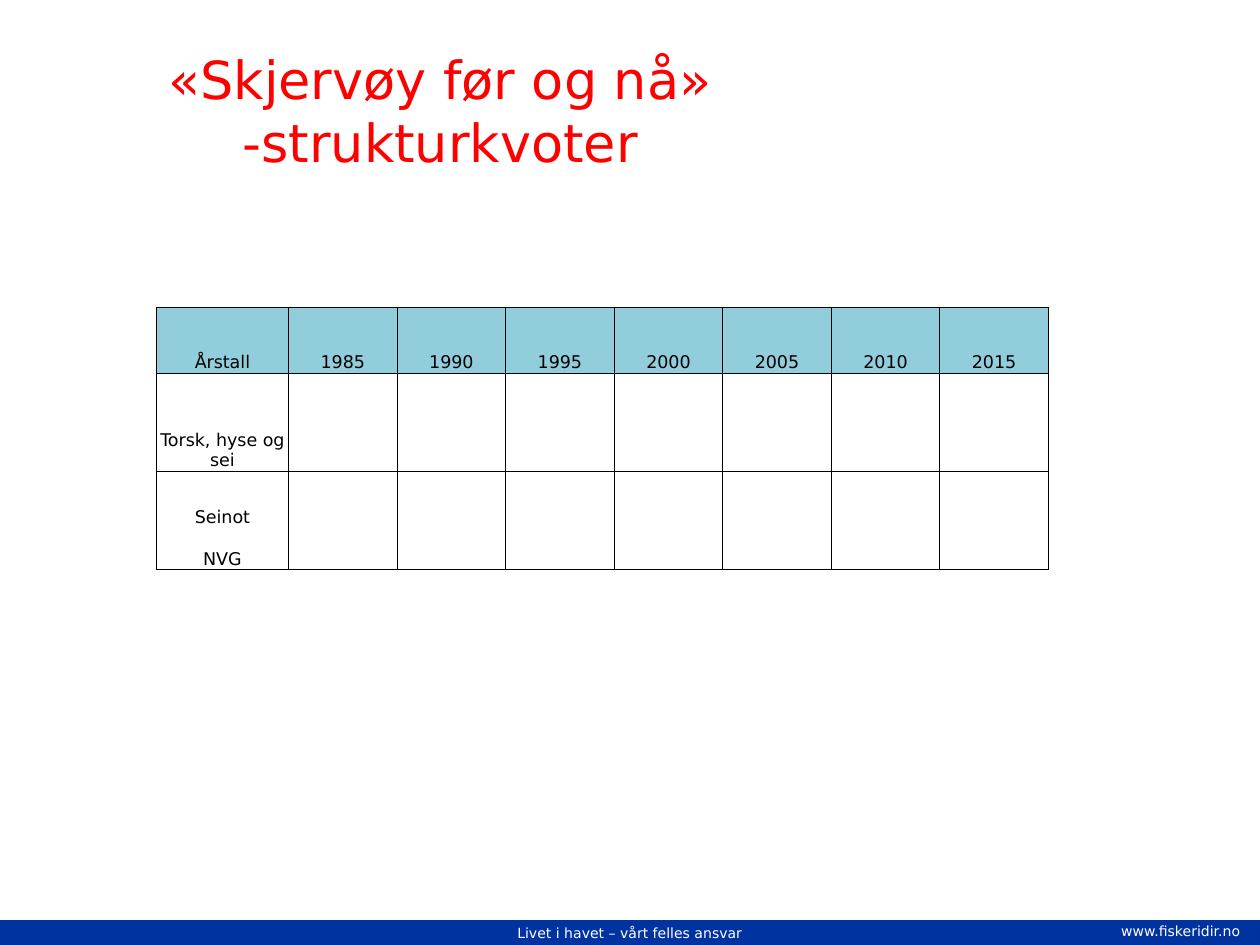
from lxml import etree
from pptx import Presentation
from pptx.dml.color import RGBColor
from pptx.enum import shapes, text
from pptx.oxml import ns
from pptx.util import Inches, Pt

COLOURS = {"title": "FF0000", "bar": "0033A0", "edge": "00329C",
           "light": "FFFFFF", "ink": "000000", "header": "92CDDC"}
FONT = "DejaVu Sans"
YEARS = range(1985, 2016, 5)
ROW_LABELS = [["Torsk, hyse og sei"], ["Seinot", "NVG"]]


def rgb(name):
    return RGBColor.from_string(COLOURS[name])


def set_all(target, **values):
    for name, value in values.items():
        setattr(target, name, value)


def write(frame, lines, size, colour, align=text.PP_ALIGN.CENTER, gap=0):
    """Write one paragraph per line, with a gap in points between them."""
    for index, line in enumerate(lines):
        para = frame.add_paragraph() if index else frame.paragraphs[0]
        para.text = line
        para.alignment = align
        if index:
            para.space_before = Pt(gap)
        for span in para.runs:
            set_all(span.font, name=FONT, size=Pt(size))
            span.font.color.rgb = rgb(colour)


def add_title(page, box):
    frame = page.shapes.add_textbox(*map(Inches, box)).text_frame
    set_all(frame, word_wrap=True, vertical_anchor=text.MSO_ANCHOR.TOP)
    write(frame, ["«Skjervøy før og nå»\v-strukturkvoter"], 30, "title")


def add_footer(page, box):
    left, top, width, height = box
    # Coloured bar with the motto
    bar = page.shapes.add_shape(shapes.MSO_SHAPE.RECTANGLE, *map(Inches, box))
    bar.shadow.inherit = False
    bar.fill.solid()
    bar.fill.fore_color.rgb = rgb("bar")
    bar.line.color.rgb = rgb("edge")
    bar.line.width = Pt(0.75)
    set_all(bar.text_frame, vertical_anchor=text.MSO_ANCHOR.MIDDLE,
            margin_top=0, margin_bottom=0)
    write(bar.text_frame, ["Livet i havet – vårt felles ansvar"], 8, "light")
    # Web address at the right end
    address = page.shapes.add_textbox(
        Inches(left + 0.88 * width), Inches(top - 0.04),
        Inches(1.92), Inches(0.24))
    set_all(address.text_frame, word_wrap=True,
            auto_size=text.MSO_AUTO_SIZE.SHAPE_TO_FIT_TEXT)
    write(address.text_frame, ["www.fiskeridir.no"], 8, "light",
          text.PP_ALIGN.LEFT)


def add_borders(cell):
    properties = cell._tc.get_or_add_tcPr()
    for index, side in enumerate(("lnL", "lnR", "lnT", "lnB")):
        line = etree.Element(ns.qn("a:" + side), w=str(Pt(0.5)))
        fill = etree.SubElement(line, ns.qn("a:solidFill"))
        etree.SubElement(fill, ns.qn("a:srgbClr"), val=COLOURS["ink"])
        properties.insert(index, line)


def add_quota_table(page, box):
    left, top, width, height = box
    rows, columns = len(ROW_LABELS) + 1, len(YEARS) + 1
    table = page.shapes.add_table(rows, columns, *map(Inches, box)).table
    set_all(table, first_row=False, horz_banding=False)

    # The label column is wider; the header row is lower
    label_width, header_height = 1.05, height / 4
    for index, column in enumerate(table.columns):
        column.width = Inches((width - label_width) / len(YEARS)
                              if index else label_width)
    for index, row in enumerate(table.rows):
        row.height = Inches((height - header_height) / len(ROW_LABELS)
                            if index else header_height)

    contents = {(0, 0): ["Årstall"]}
    contents.update({(0, c): [str(year)] for c, year in enumerate(YEARS, 1)})
    contents.update({(r, 0): label for r, label in enumerate(ROW_LABELS, 1)})
    for r in range(rows):
        for c in range(columns):
            cell = table.cell(r, c)
            set_all(cell, vertical_anchor=text.MSO_ANCHOR.BOTTOM,
                    margin_left=Inches(0.01), margin_right=Inches(0.01),
                    margin_top=Inches(0.01), margin_bottom=0)
            if r == 0:
                cell.fill.solid()
                cell.fill.fore_color.rgb = rgb("header")
            else:
                cell.fill.background()
            add_borders(cell)
            write(cell.text_frame, contents.get((r, c), []), 10, "ink", gap=12)


def main():
    deck = Presentation()
    set_all(deck, slide_width=Inches(10), slide_height=Inches(7.5))
    page = deck.slides.add_slide(deck.slide_layouts[6])
    add_footer(page, (0, 7.31, 10, 0.19))
    add_title(page, (0.48, 0.32, 6.03, 1.15))
    add_quota_table(page, (1.24, 2.44, 7.08, 2.08))
    deck.save("out.pptx")


if __name__ == "__main__":
    main()
